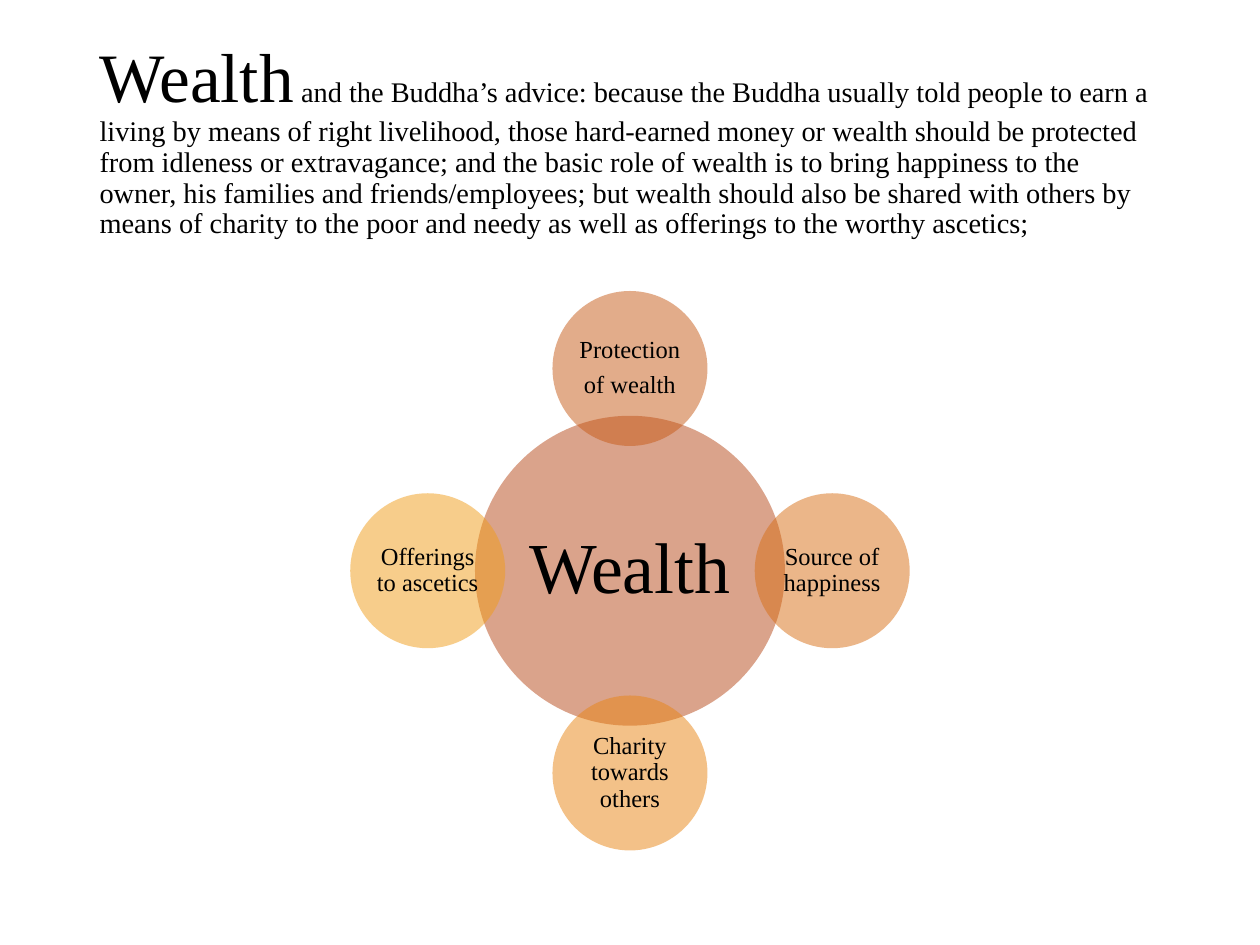
from lxml import etree
from pptx import Presentation
from pptx import util as u
from pptx.dml.color import RGBColor
from pptx.enum import shapes, text
from pptx.oxml.ns import qn


def paint(color_format, value, opacity=None):
    color_format.rgb = RGBColor.from_string(value)
    if opacity:
        color = color_format._xFill.find(qn("a:srgbClr"))
        etree.SubElement(color, qn("a:alpha")).set("val", str(opacity * 1000))


def write(paragraph, words, size):
    run = paragraph.add_run()
    run.text = words
    for name, value in {"name": "Times New Roman", "size": u.Pt(size), "bold": False}.items():
        setattr(run.font, name, value)
    paint(run.font.color, "000000")


presentation = Presentation()
width = presentation.slide_width = u.Inches(10)
height = presentation.slide_height = u.Inches(7.5)
slide = presentation.slides.add_slide(presentation.slide_layouts[5])

title = slide.shapes.title
title_box = {"left": 0.069 * width, "top": 0.053 * height,
             "width": 0.862 * width, "height": 0.193 * height}
for name, value in title_box.items():
    setattr(title, name, int(value))
title_format = {"auto_size": text.MSO_AUTO_SIZE.NONE, "word_wrap": True,
                "vertical_anchor": text.MSO_ANCHOR.MIDDLE}
for name, value in title_format.items():
    setattr(title.text_frame, name, value)
paragraph = title.text_frame.paragraphs[0]
for name, value in {"alignment": text.PP_ALIGN.LEFT, "line_spacing": 0.9}.items():
    setattr(paragraph, name, value)
write(paragraph, "Wealth", 39.6)
write(paragraph, " and the Buddha’s advice: because the Buddha usually told people to earn a living "
      "by means of right livelihood, those hard-earned money or wealth should be protected from "
      "idleness or extravagance; and the basic role of wealth is to bring happiness to the owner, "
      "his families and friends/employees; but wealth should also be shared with others by means "
      "of charity to the poor and needy as well as offerings to the worthy ascetics;", 16.2)

center_x, center_y = 0.5 * width, 0.604 * height
orbit = 0.1605 * width
hub, satellite = 0.246 * width, 0.123 * width
circles = [
    (0, 0, hub, "B74919", 41, 0.06, ["Wealth"]),
    (0, -1, satellite, "C75A17", 14, 0.02, ["Protection", "of wealth"]),
    (1, 0, satellite, "D86E15", 14, 0.02, ["Source of happiness"]),
    (0, 1, satellite, "E98512", 14, 0.02, ["Charity towards others"]),
    (-1, 0, satellite, "F19D19", 14, 0.02, ["Offerings to ascetics"]),
]
for column, row, diameter, color, size, margin, lines in circles:
    left = int(center_x + column * orbit - diameter / 2)
    top = int(center_y + row * orbit - diameter / 2)
    shape = slide.shapes.add_shape(shapes.MSO_SHAPE.OVAL, left, top, int(diameter), int(diameter))
    shape.shadow.inherit = False
    shape.line.fill.background()
    shape.fill.solid()
    paint(shape.fill.fore_color, color, 50)
    frame = shape.text_frame
    frame_format = {"word_wrap": True, "vertical_anchor": text.MSO_ANCHOR.MIDDLE}
    for side in ("left", "top", "right", "bottom"):
        frame_format["margin_" + side] = u.Inches(margin)
    for name, value in frame_format.items():
        setattr(frame, name, value)
    for index, line in enumerate(lines):
        paragraph = frame.add_paragraph() if index else frame.paragraphs[0]
        paragraph_format = {"alignment": text.PP_ALIGN.CENTER, "line_spacing": 0.9,
                            "space_after": u.Pt(0.35 * size)}
        for name, value in paragraph_format.items():
            setattr(paragraph, name, value)
        write(paragraph, line, size)

presentation.save("out.pptx")
